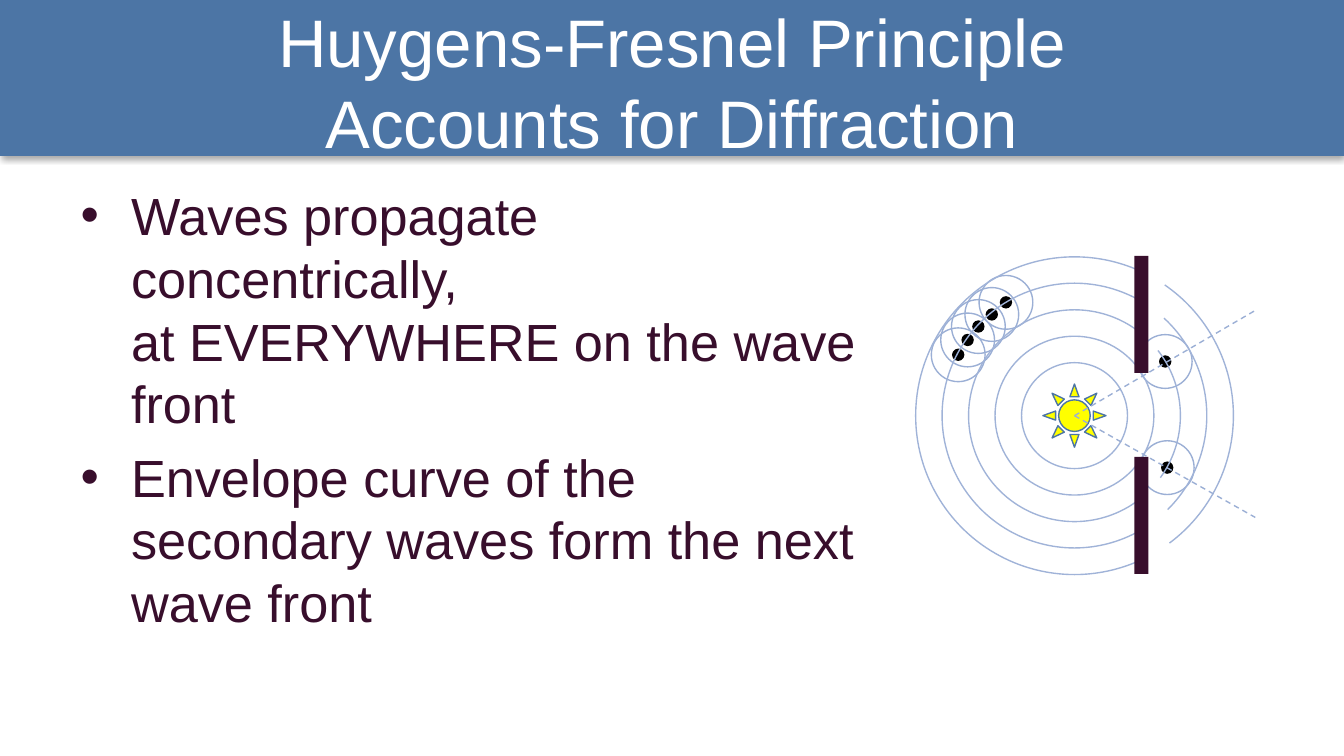
from lxml.etree import SubElement
from pptx import Presentation
from pptx.dml.color import RGBColor
from pptx.enum.dml import MSO_LINE
from pptx.enum.shapes import MSO_CONNECTOR, MSO_SHAPE
from pptx.enum.text import MSO_AUTO_SIZE
from pptx.oxml.ns import qn
from pptx.util import Inches, Pt

BLUE = RGBColor(0x4C, 0x75, 0xA5)
PLUM = RGBColor(0x38, 0x0E, 0x2C)
RING = RGBColor(0xA0, 0xB3, 0xD8)
WAVELET = RGBColor(0x9B, 0xAF, 0xD5)
YELLOW = RGBColor(0xFF, 0xFF, 0x00)
BLACK = RGBColor(0x00, 0x00, 0x00)
WHITE = RGBColor(0xFF, 0xFF, 0xFF)

COLUMNS, ROWS = 100, 56.25
CELL = Inches(0.1)
SOURCE = (79.95, 30.93)
RING_STEP = 3.94
WAVELET_CENTRES = [
    (72.8, 24.3), (73.8, 23.4), (74.85, 22.5), (72, 25.3), (71.3, 26.4),
    (86.7, 26.9), (86.85, 34.8),
]
INCOMING_ARCS = {4: (53.3, 307.9), 5: (60.1, 300.3), 6: (66.05, 294.1)}
DIFFRACTED_ARCS = {6: (304.6, 53.3), 5: (312.6, 45.2), 4: (322, 35.8)}


def cells(*values):
    return [round(value * CELL) for value in values]


class SlideBuilder:
    font_name = "Arial"
    line_width = Pt(0.75)

    def __init__(self, presentation):
        self.slide = presentation.slides.add_slide(presentation.slide_layouts[1])
        self.shapes = self.slide.shapes

    def placeholder(self, index, box, text, size, color):
        shape = self.slide.placeholders[index]
        shape.left, shape.top, shape.width, shape.height = cells(*box)
        frame = shape.text_frame
        frame.text = text
        frame.auto_size = MSO_AUTO_SIZE.NONE
        frame.paragraphs[0].space_before = Pt(0)
        for paragraph in frame.paragraphs:
            paragraph.font.name = self.font_name
            paragraph.font.size = Pt(size)
            paragraph.font.color.rgb = color
        return shape

    def shape(self, kind, box, fill=None, line=None):
        shape = self.shapes.add_shape(kind, *cells(*box))
        shape.shadow.inherit = False
        if fill is None:
            shape.fill.background()
        else:
            shape.fill.solid()
            shape.fill.fore_color.rgb = fill
        if line is None:
            shape.line.fill.background()
        else:
            shape.line.color.rgb = line
            shape.line.width = self.line_width
        return shape

    def banner(self, box, color, title):
        shape = self.shape(MSO_SHAPE.RECTANGLE, box, color)
        effects = shape.element.spPr.find(qn("a:effectLst"))
        shadow = SubElement(effects, qn("a:outerShdw"), blurRad=str(Pt(3.1)),
                            dist=str(Pt(1.8)), dir="5400000", rotWithShape="0")
        shade = SubElement(shadow, qn("a:srgbClr"), val=str(BLACK))
        SubElement(shade, qn("a:alpha"), val="35000")
        title.element.addprevious(shape.element)

    def centred(self, kind, centre, size, fill=None, line=None):
        x, y = centre
        box = (x - size / 2, y - size / 2, size, size)
        return self.shape(kind, box, fill, line)

    def wavelet(self, centre):
        self.centred(MSO_SHAPE.OVAL, centre, 4, line=WAVELET)
        self.centred(MSO_SHAPE.OVAL, centre, 0.92, BLACK)

    def arcs(self, angles_by_ring):
        for ring, angles in angles_by_ring.items():
            arc = self.centred(MSO_SHAPE.ARC, SOURCE, ring * RING_STEP, line=RING)
            for index, degrees in enumerate(angles):
                arc.adjustments[index] = degrees * 0.6

    def ray(self, end):
        line = self.shapes.add_connector(MSO_CONNECTOR.STRAIGHT, *cells(*SOURCE, *end))
        line.line.color.rgb = WAVELET
        line.line.width = self.line_width
        line.line.dash_style = MSO_LINE.DASH
        SubElement(line.element.spPr, qn("a:effectLst"))


def main():
    presentation = Presentation()
    presentation.slide_width, presentation.slide_height = cells(COLUMNS, ROWS)
    builder = SlideBuilder(presentation)

    title = builder.placeholder(
        0, (14.55, 1.35, 70.9, 9.4),
        "Huygens-Fresnel Principle Accounts for Diffraction", 36, WHITE)
    builder.banner((0, 0, COLUMNS, 11.6), BLUE, title)
    builder.placeholder(
        1, (5, 13.14, 61.4, 35.6),
        "Waves propagate concentrically, \vat EVERYWHERE on the wave front\n"
        "Envelope curve of the secondary waves form the next wave front", 28, PLUM)

    for centre in WAVELET_CENTRES:
        builder.wavelet(centre)
    builder.centred(MSO_SHAPE.SUN, SOURCE, 4.7, YELLOW, BLUE)
    for ring in (2, 3):
        builder.centred(MSO_SHAPE.OVAL, SOURCE, ring * RING_STEP, line=RING)
    builder.arcs(INCOMING_ARCS)
    for top in (34, 19.05):
        builder.shape(MSO_SHAPE.RECTANGLE, (84.4, top, 1.05, 8.7), PLUM)
    builder.arcs(DIFFRACTED_ARCS)
    for end in ((93.4, 23.1), (93.4, 38.5)):
        builder.ray(end)

    presentation.save("out.pptx")


if __name__ == "__main__":
    main()
